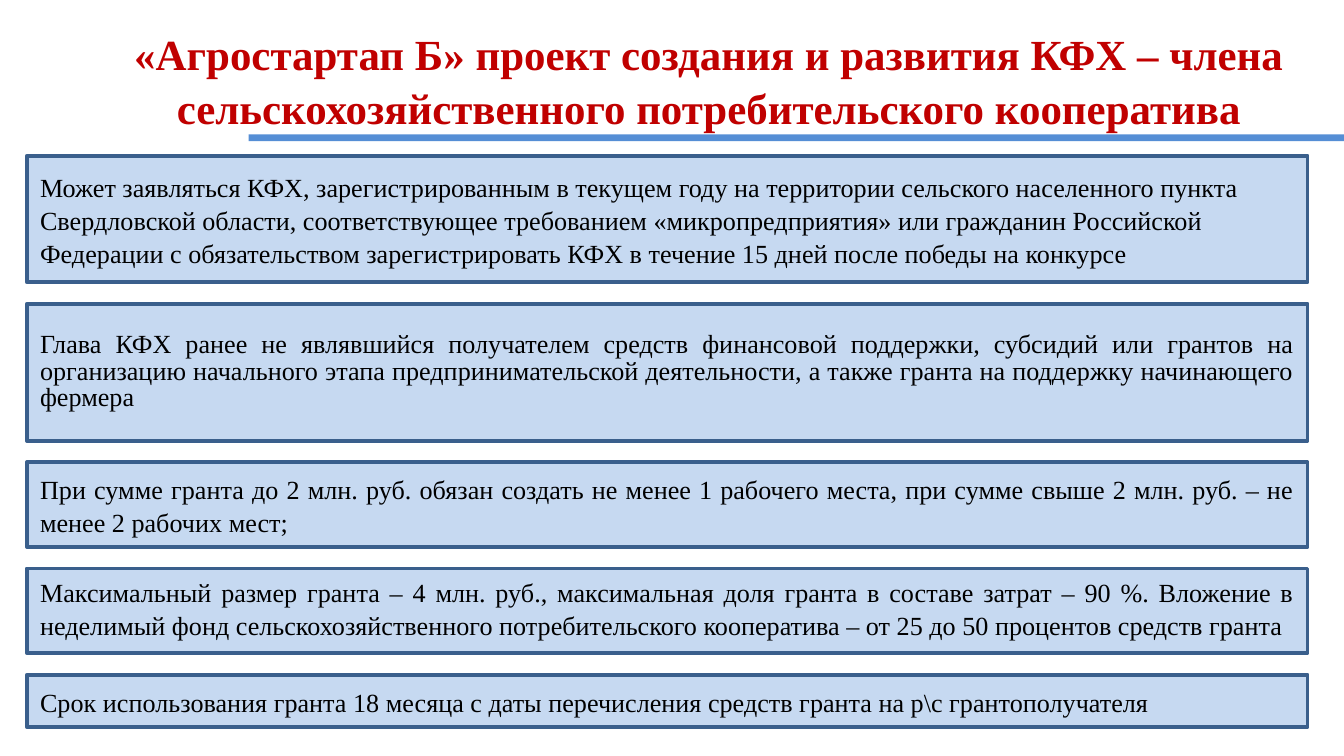
from typing import NamedTuple

from pptx import Presentation
from pptx.dml.color import RGBColor
from pptx.enum.shapes import MSO_SHAPE
from pptx.enum.text import MSO_ANCHOR, PP_ALIGN
from pptx.shapes.autoshape import Shape
from pptx.slide import Slide
from pptx.text.text import TextFrame
from pptx.util import Length, Pt

EMU_PER_PX = 4572  # 200 px to the inch
FONT_NAME = "Times New Roman"
LINE_SPACING = 1.05
COLORS = {
    "title": "C00000",
    "text": "000000",
    "box": "C6D9F1",
    "border": "3A5F8C",
    "rule": "558ED5",
}

BOX_LEFT, BOX_TOP, BOX_WIDTH, BOX_GAP = 40, 232, 1906, 32


class Condition(NamedTuple):
    height: int
    text: str
    alignment: PP_ALIGN = PP_ALIGN.JUSTIFY
    anchor: MSO_ANCHOR = MSO_ANCHOR.MIDDLE
    line_spacing: float | Length = LINE_SPACING


TITLE = (
    "«Агростартап Б» проект создания и развития КФХ – члена "
    "сельскохозяйственного потребительского кооператива"
)
CONDITIONS = [
    Condition(
        188,
        "Может заявляться КФХ, зарегистрированным в текущем году на территории "
        "сельского населенного пункта Свердловской области, соответствующее "
        "требованием «микропредприятия» или гражданин Российской Федерации с "
        "обязательством зарегистрировать КФХ в течение 15 дней после победы на конкурсе",
        alignment=PP_ALIGN.LEFT,
    ),
    Condition(
        204,
        "Глава КФХ ранее не являвшийся получателем средств финансовой поддержки, "
        "субсидий или грантов на организацию начального этапа предпринимательской "
        "деятельности, а также гранта на поддержку начинающего фермера",
        line_spacing=Pt(14),
    ),
    Condition(
        126,
        "При сумме гранта до 2 млн. руб. обязан создать не менее 1 рабочего места, "
        "при сумме свыше 2 млн. руб. – не менее 2 рабочих мест;",
    ),
    Condition(
        126,
        "Максимальный размер гранта – 4 млн. руб., максимальная доля гранта в составе "
        "затрат – 90 %. Вложение в неделимый фонд сельскохозяйственного "
        "потребительского кооператива – от 25 до 50 процентов средств гранта",
        anchor=MSO_ANCHOR.TOP,
    ),
    Condition(
        78,
        "Срок использования гранта 18 месяца с даты перечисления средств гранта "
        "на р\\с грантополучателя",
        alignment=PP_ALIGN.LEFT,
    ),
]


def px(value: int) -> Length:
    return Length(value * EMU_PER_PX)


def color(name: str) -> RGBColor:
    return RGBColor.from_string(COLORS[name])


def write_text(
    frame: TextFrame,
    text: str,
    size: int,
    color_name: str,
    alignment: PP_ALIGN,
    anchor: MSO_ANCHOR,
    line_spacing: float | Length = LINE_SPACING,
    bold: bool = False,
) -> None:
    frame.word_wrap = True
    frame.vertical_anchor = anchor
    paragraph = frame.paragraphs[0]
    paragraph.alignment = alignment
    paragraph.line_spacing = line_spacing
    run = paragraph.add_run()
    run.text = text
    run.font.name = FONT_NAME
    run.font.size = Pt(size)
    run.font.bold = bold
    run.font.color.rgb = color(color_name)


def add_rectangle(
    slide: Slide, left: int, top: int, width: int, height: int, fill_name: str
) -> Shape:
    shape = slide.shapes.add_shape(
        MSO_SHAPE.RECTANGLE, px(left), px(top), px(width), px(height)
    )
    shape.shadow.inherit = False
    shape.fill.solid()
    shape.fill.fore_color.rgb = color(fill_name)
    shape.line.fill.background()
    return shape


def add_condition(slide: Slide, condition: Condition, top: int) -> None:
    shape = add_rectangle(slide, BOX_LEFT, top, BOX_WIDTH, condition.height, "box")
    shape.line.color.rgb = color("border")
    shape.line.width = Pt(2)
    write_text(
        shape.text_frame,
        condition.text,
        14,
        "text",
        condition.alignment,
        condition.anchor,
        condition.line_spacing,
    )


def main() -> None:
    presentation = Presentation()
    presentation.slide_width = px(2000)
    presentation.slide_height = px(1125)
    slide = presentation.slides.add_slide(presentation.slide_layouts[6])

    # Title
    title = slide.shapes.add_textbox(px(150), px(28), px(1812), px(158))
    write_text(
        title.text_frame, TITLE, 23, "title", PP_ALIGN.CENTER, MSO_ANCHOR.TOP, bold=True
    )

    # Grant conditions, stacked with equal gaps
    top = BOX_TOP
    for condition in CONDITIONS:
        add_condition(slide, condition, top)
        top += condition.height + BOX_GAP

    # Rule under the title
    add_rectangle(slide, 370, 200, 1630, 10, "rule")

    presentation.save("out.pptx")


if __name__ == "__main__":
    main()
